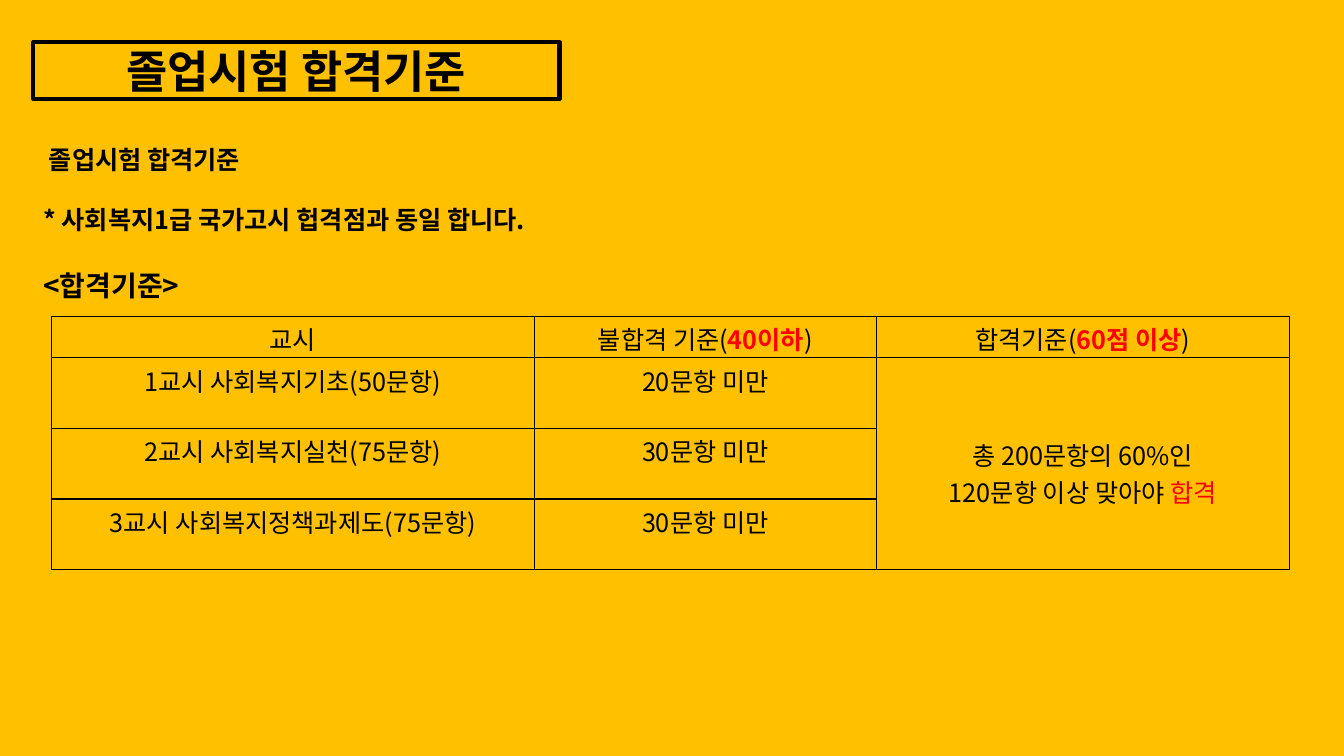
from pptx import Presentation
from pptx.dml.color import RGBColor as RGB
from pptx.enum.text import MSO_ANCHOR as Anchor, MSO_AUTO_SIZE as Fit, PP_ALIGN as Align
from pptx.oxml.ns import qn
from pptx.util import Inches, Pt
from lxml.etree import SubElement as Sub

INK = {"back": "FFC000", "text": "000000", "mark": "FF0000"}
FONT = "Noto Sans CJK KR"
HEAD = [
    ["교시"],
    ["불합격 기준(", ("40이하", True), ")"],
    ["합격기준(", ("60점 이상", True), ")"],
]
ROWS = [
    ("1교시 사회복지기초(50문항)", "20문항 미만"),
    ("2교시 사회복지실천(75문항)", "30문항 미만"),
    ("3교시 사회복지정책과제도(75문항)", "30문항 미만"),
]


def write(para, text, size=18, bold=False, color="text", align=None, space=None):
    if align is not None:
        para.alignment = align
    if space:
        para.line_spacing = space
    run = para.add_run()
    run.text = text
    font = run.font
    font.name, font.size, font.bold = FONT, Pt(size), bold
    font.color.rgb = RGB.from_string(INK[color])
    Sub(run._r.get_or_add_rPr(), qn("a:ea"), typeface=FONT)


def place(shape, box):
    shape.left, shape.top, shape.width, shape.height = [Inches(n) for n in box]


def add_title(slide, box):
    title = slide.shapes.title
    place(title, box)
    title.line.color.rgb = RGB.from_string(INK["text"])
    title.line.width = Pt(3)
    frame = title.text_frame
    frame.auto_size = Fit.NONE
    frame.vertical_anchor = Anchor.MIDDLE
    write(frame.paragraphs[0], "졸업시험 합격기준", size=32, bold=True, align=Align.CENTER)


def add_notes(slide, box):
    frame = slide.shapes.add_textbox(*[Inches(n) for n in box]).text_frame
    frame.word_wrap = True
    lines = [
        (" 졸업시험 합격기준", 18),
        ("* 사회복지1급 국가고시 헙격점과 동일 합니다.", 18),
        ("<합격기준>", 20),
    ]
    for i, (text, size) in enumerate(lines):
        para = frame.add_paragraph() if i else frame.paragraphs[0]
        write(para, text, size=size, bold=True, space=2.0)


def style(cell):
    props = cell._tc.get_or_add_tcPr()
    for side in ("lnL", "lnR", "lnT", "lnB"):
        line = Sub(props, qn(f"a:{side}"), w=str(Pt(1)))
        Sub(Sub(line, qn("a:solidFill")), qn("a:srgbClr"), val=INK["text"])
    cell.fill.background()
    cell.margin_top, cell.margin_bottom = Inches(0.04), 0


def add_grid(slide, box):
    grid = slide.shapes.add_table(4, 3, *[Inches(n) for n in box]).table
    for col, width in zip(grid.columns, (4.79, 3.39, 4.1)):
        col.width = Inches(width)
    for row, height in zip(grid.rows, (0.41, 0.7, 0.7, 0.7)):
        row.height = Inches(height)
    for cell in grid.iter_cells():
        style(cell)
    for c, parts in enumerate(HEAD):
        para = grid.cell(0, c).text_frame.paragraphs[0]
        for part in parts:
            text, hot = part if isinstance(part, tuple) else (part, False)
            write(para, text, bold=hot, color="mark" if hot else "text", align=Align.CENTER)
    for r, row in enumerate(ROWS, 1):
        for c, text in enumerate(row):
            write(grid.cell(r, c).text_frame.paragraphs[0], text, align=Align.CENTER)
    goal = grid.cell(1, 2)
    goal.merge(grid.cell(3, 2))
    goal.margin_top = Inches(0.78)
    frame = goal.text_frame
    write(frame.paragraphs[0], "총 200문항의 60%인", align=Align.CENTER)
    para = frame.add_paragraph()
    write(para, "120문항 이상 맞아야 ", align=Align.CENTER)
    write(para, "합격", color="mark")


def main():
    deck = Presentation()
    deck.slide_width, deck.slide_height = Inches(13.33), Inches(7.5)
    slide = deck.slides.add_slide(deck.slide_layouts[5])
    fill = slide.background.fill
    fill.solid()
    fill.fore_color.rgb = RGB.from_string(INK["back"])
    add_title(slide, (0.33, 0.42, 5.22, 0.56))
    add_notes(slide, (0.33, 1.08, 13, 2.93))
    add_grid(slide, (0.51, 3.14, 12.28, 2.51))
    deck.save("out.pptx")


if __name__ == "__main__":
    main()
